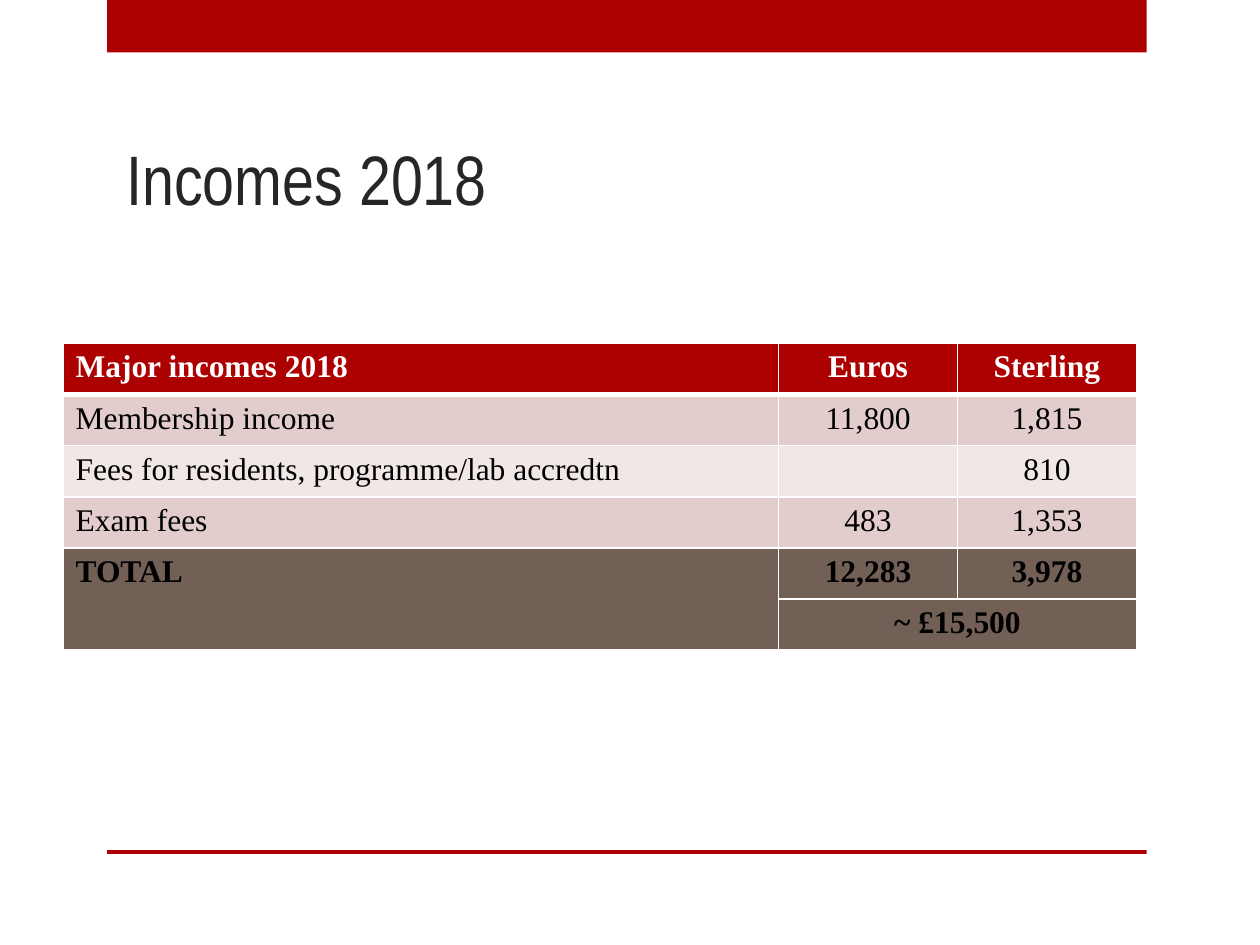
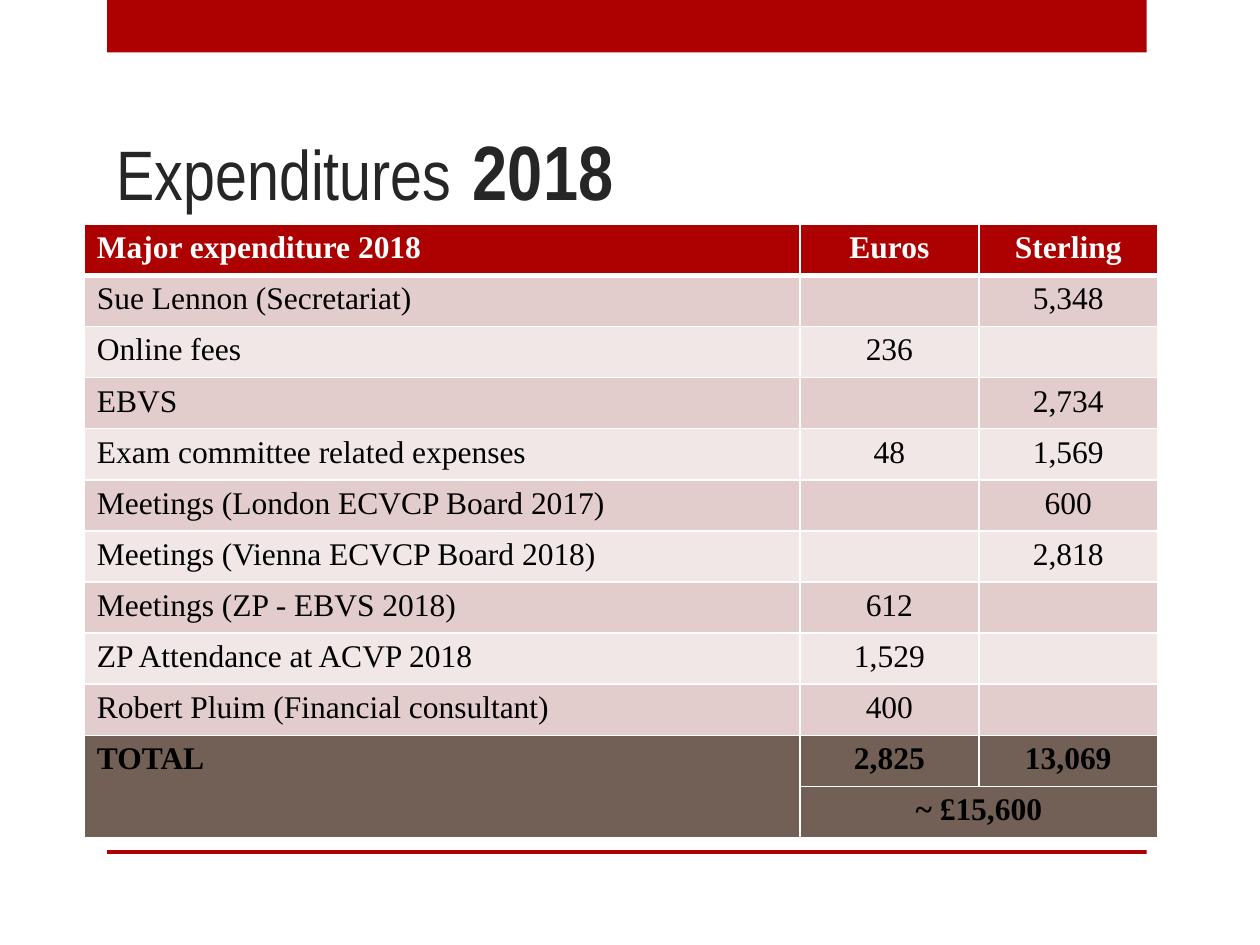
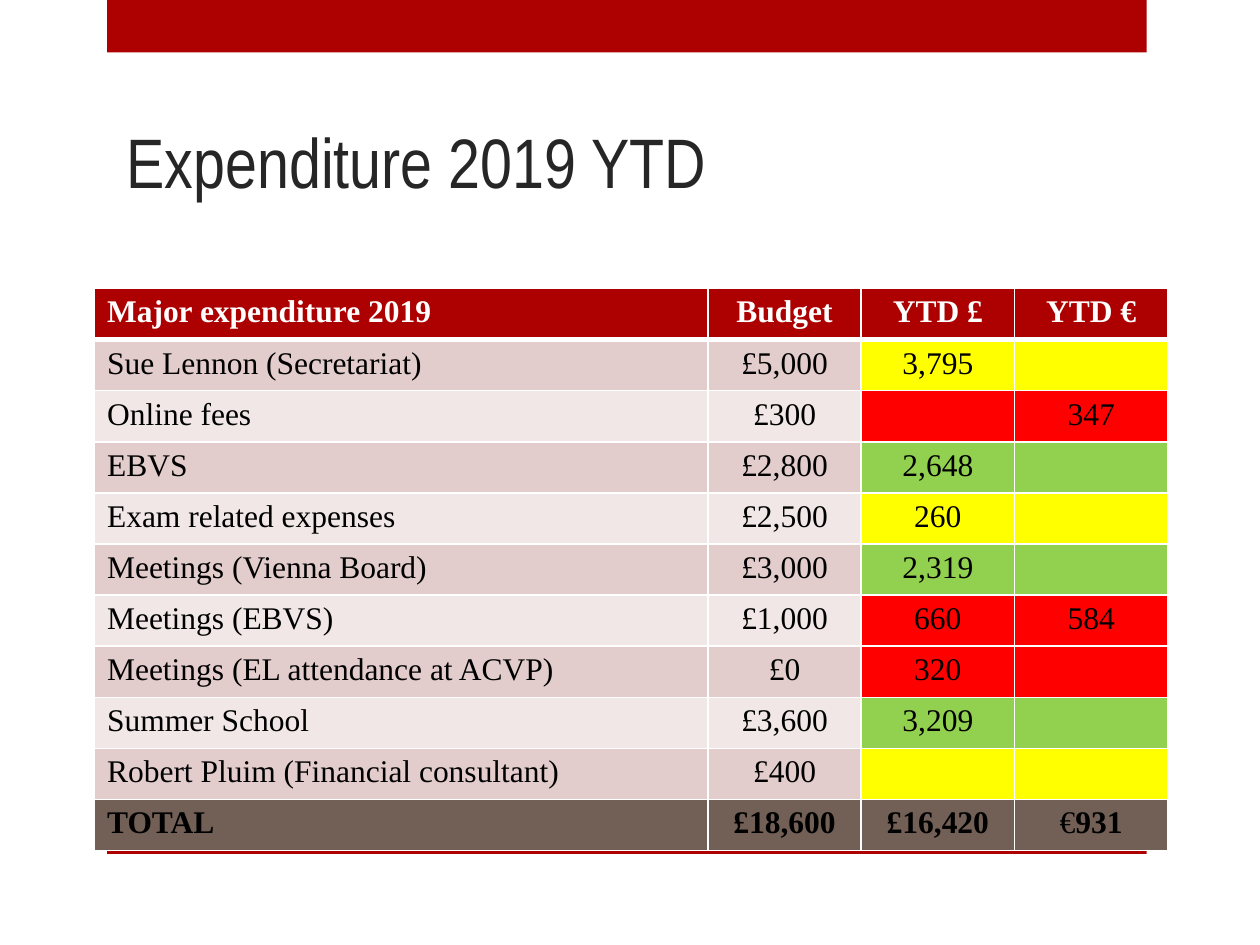
from lxml import etree
from pptx import Presentation
from pptx.dml.color import RGBColor
from pptx.enum import shapes, text
from pptx.oxml import ns
from pptx.util import Pt

RED, INK, WHITE, BLACK = "AD0101", "262626", "FFFFFF", "000000"
BANDS, TOTAL = ("E3CCCC", "F1E7E7"), "726056"
OVER, NEAR, GOOD = "FF0000", "FFFF00", "92D050"
HEAD, BODY = "Arial Narrow", "Times New Roman"


def color(code):
    return RGBColor.from_string(code)


class Deck:
    def __init__(self):
        self.prs = Presentation()
        self.prs.slide_width, self.prs.slide_height = Pt(720), Pt(540)
        self.slide = None

    def page(self):
        self.slide = self.prs.slides.add_slide(self.prs.slide_layouts[6])
        self.bar(0, 30)
        self.bar(485.8, 2.2)

    def bar(self, top, high):
        bar = self.slide.shapes.add_shape(
            shapes.MSO_SHAPE.RECTANGLE, Pt(61.2), Pt(top), Pt(594), Pt(high))
        bar.shadow.inherit = False
        bar.fill.solid()
        bar.fill.fore_color.rgb = color(RED)
        bar.line.fill.background()

    def run(self, para, words, size, font, tint, bold=False):
        run = para.add_run()
        run.text = words
        run.font.size, run.font.name, run.font.bold = Pt(size), font, bold
        run.font.color.rgb = color(tint)

    def title(self, left, top, high, runs):
        box = self.slide.shapes.add_textbox(Pt(left), Pt(top), Pt(534.2), Pt(high))
        frame = box.text_frame
        frame.word_wrap = True
        frame.vertical_anchor = text.MSO_ANCHOR.BOTTOM
        for words, size, bold in runs:
            self.run(frame.paragraphs[0], words, size, HEAD, INK, bold)

    def edges(self, cell, above, below):
        props = cell._tc.get_or_add_tcPr()
        sides = (("lnL", 1), ("lnR", 1), ("lnT", above), ("lnB", below))
        for spot, (side, wide) in enumerate(sides):
            line = etree.Element(ns.qn("a:" + side), w=str(Pt(wide)))
            fill = etree.SubElement(line, ns.qn("a:solidFill"))
            etree.SubElement(fill, ns.qn("a:srgbClr"), val=WHITE)
            props.insert(spot, line)

    def cell(self, cell, runs, fill, tint, bold, center):
        cell.fill.solid()
        cell.fill.fore_color.rgb = color(fill)
        para = cell.text_frame.paragraphs[0]
        para.font.size = Pt(18)
        if center:
            para.alignment = text.PP_ALIGN.CENTER
        # A list of runs sets its own weights
        for words, weight in runs if isinstance(runs, list) else [(runs, bold)]:
            if words:
                self.run(para, words, 18, BODY, tint, weight)

    def table(self, left, top, rows, marks=(), sums=1):
        """The last `sums` rows are totals; marks colour the last two columns."""
        count, width, high = len(rows[0]), 613.4, 29.2
        grid = self.slide.shapes.add_table(
            len(rows), count, Pt(left), Pt(top), Pt(width), Pt(high * len(rows))).table
        # The first column is four times as wide as the others
        unit = width / (count + 3)
        for c, col in enumerate(grid.columns):
            col.width = Pt(unit if c else 4 * unit)
        for r, row in enumerate(rows):
            grid.rows[r].height = Pt(high)
            first, last = r == 0, r >= len(rows) - sums
            band = RED if first else TOTAL if last else BANDS[(r - 1) % 2]
            for c, words in enumerate(row):
                marked = marks and c >= count - 2 and not (first or last)
                cell = grid.cell(r, c)
                self.cell(cell, words, marks[r - 1] if marked else band,
                          WHITE if first else BLACK, first or last, c > 0)
                self.edges(cell, 3 if r == 1 else 1, 3 if first else 1)
        if sums == 2:
            end = len(rows) - 1
            grid.cell(end - 1, 0).merge(grid.cell(end, 0))
            grid.cell(end, 1).merge(grid.cell(end, 2))


def main():
    deck = Deck()

    # Incomes
    deck.page()
    deck.title(65.2, 54.7, 74.2, [("Incomes 2018", 40, False)])
    deck.table(36, 196.3, [
        ("Major incomes 2018", "Euros", "Sterling"),
        ("Membership income", "11,800", "1,815"),
        ("Fees for residents, programme/lab accredtn", "", "810"),
        ("Exam fees", "483", "1,353"),
        ("TOTAL", "12,283", "3,978"),
        ("", "~ £15,500", ""),
    ], sums=2)

    # Expenditures
    deck.page()
    deck.title(59.5, 43.2, 85.7, [
        ("Expenditures", 40, False), (" ", 54, True), ("2018", 44, True)])
    deck.table(48.2, 128.2, [
        ("Major expenditure 2018", "Euros", "Sterling"),
        ("Sue Lennon (Secretariat)", "", "5,348"),
        ("Online fees", "236", ""),
        ("EBVS", "", "2,734"),
        ("Exam committee related expenses", "48", "1,569"),
        ("Meetings (London ECVCP Board 2017)", "", "600"),
        ("Meetings (Vienna ECVCP Board 2018)", "", "2,818"),
        ("Meetings (ZP - EBVS 2018)", "612", ""),
        ("ZP Attendance at ACVP 2018", "1,529", ""),
        ("Robert Pluim (Financial consultant)", "400", ""),
        ("TOTAL", "2,825", "13,069"),
        ("", "~ £15,600", ""),
    ], sums=2)

    # Budget against year to date
    deck.page()
    deck.title(65.2, 43.2, 76.3, [("Expenditure 2019 YTD", 40, False)])
    deck.table(54, 164.9, [
        ("Major expenditure 2019", "Budget", "YTD £", "YTD €"),
        ("Sue Lennon (Secretariat)", "£5,000", "3,795", ""),
        ("Online fees", "£300", "", "347"),
        ("EBVS", "£2,800", "2,648", ""),
        ("Exam related expenses", "£2,500", "260", ""),
        ("Meetings (Vienna Board)", "£3,000", "2,319", ""),
        ("Meetings (EBVS)", "£1,000", "660", "584"),
        ("Meetings (EL attendance at ACVP)", "£0", "320", ""),
        ("Summer School", "£3,600", "3,209", ""),
        ("Robert Pluim (Financial consultant)", "£400", "", ""),
        ("TOTAL", "£18,600", "£16,420", [("€", False), ("931", True)]),
    ], marks=(NEAR, OVER, GOOD, NEAR, GOOD, OVER, OVER, GOOD, NEAR))

    deck.prs.save("out.pptx")


if __name__ == "__main__":
    main()
